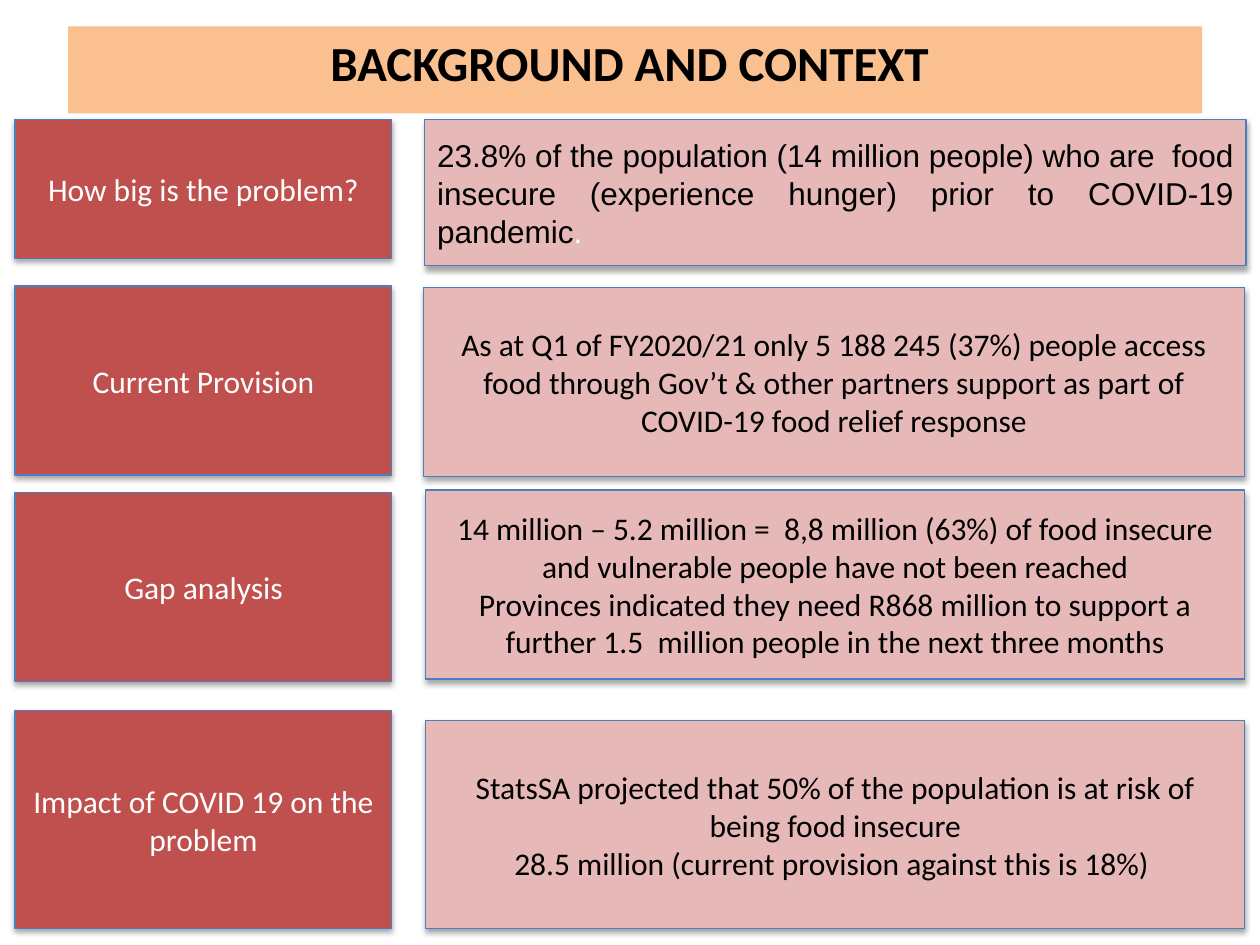
"""Build the background and context slide: four questions, each with its answer."""
import pptx
import pptx.dml.color
import pptx.enum.shapes
import pptx.enum.text
import pptx.util

Inches, Pt = pptx.util.Inches, pptx.util.Pt
Align, Anchor = pptx.enum.text.PP_ALIGN, pptx.enum.text.MSO_ANCHOR
HUES = {"red": "C0504D", "pink": "E6B9B8", "edge": "4B7EBC",
        "peach": "FAC090", "black": "000000", "white": "FFFFFF"}


def tint(name):
    return pptx.dml.color.RGBColor.from_string(HUES[name])


def write(para, text, hue, face="Calibri", size=18):
    run = para.add_run()
    run.text = text
    run.font.name = face
    run.font.size = Pt(size)
    run.font.color.rgb = tint(hue)
    return run


deck = pptx.Presentation()
deck.slide_width, deck.slide_height = Inches(10), Inches(7.5)
slide = deck.slides.add_slide(deck.slide_layouts[5])

title = slide.shapes.title
title.left, title.top = Inches(0.54), Inches(0.21)
title.width, title.height = Inches(9), Inches(0.69)
title.fill.solid()
title.fill.fore_color.rgb = tint("peach")
frame = title.text_frame
frame.auto_size = pptx.enum.text.MSO_AUTO_SIZE.NONE
frame.vertical_anchor = Anchor.TOP
para = frame.paragraphs[0]
para.alignment = Align.CENTER
write(para, "BACKGROUND AND CONTEXT ", "black", size=28).font.bold = True

rows = [
    ("How big is the problem?", (0.95, 1.1), (3.37, 0.95, 6.52, 1.16),
     ["23.8% of the population (14 million people) who are  food insecure "
      "(experience hunger) prior to COVID-19 pandemic"]),
    ("Current Provision", (2.27, 1.5), (3.36, 2.28, 6.52, 1.5),
     ["As at Q1 of FY2020/21 only 5 188 245 (37%) people access food through "
      "Gov’t & other partners support as part of COVID-19 food relief response"]),
    ("Gap analysis", (3.91, 1.5), (3.38, 3.89, 6.5, 1.5),
     ["14 million – 5.2 million =  8,8 million (63%) of food insecure "
      "and vulnerable people have not been reached",
      "Provinces indicated they need R868 million to support a further "
      "1.5  million people in the next three months"]),
    ("Impact of COVID 19 on the problem", (5.64, 1.73), (3.38, 5.72, 6.5, 1.65),
     ["StatsSA projected that 50% of the population is at risk of "
      "being food insecure",
      "28.5 million (current provision against this is 18%) "]),
]

for index, (label, (top, height), place, facts) in enumerate(rows):
    cards = [((0.12, top, 2.99, height), "red", "white", [label]),
             (place, "pink", "black", facts)]
    for box, fill, ink, lines in cards:
        card = slide.shapes.add_shape(
            pptx.enum.shapes.MSO_SHAPE.RECTANGLE, *map(Inches, box))
        card.fill.solid()
        card.fill.fore_color.rgb = tint(fill)
        card.line.color.rgb = tint("edge")
        card.line.width = Pt(0.75)
        frame = card.text_frame
        frame.word_wrap = True
        frame.vertical_anchor = Anchor.MIDDLE
        first = index == 0 and fill == "pink"
        for count, line in enumerate(lines):
            para = frame.add_paragraph() if count else frame.paragraphs[0]
            para.alignment = Align.JUSTIFY if first else Align.CENTER
            write(para, line, ink, "Arial" if first else "Calibri")
        if first:
            write(para, ". ", "white", "Arial")

deck.save("out.pptx")
